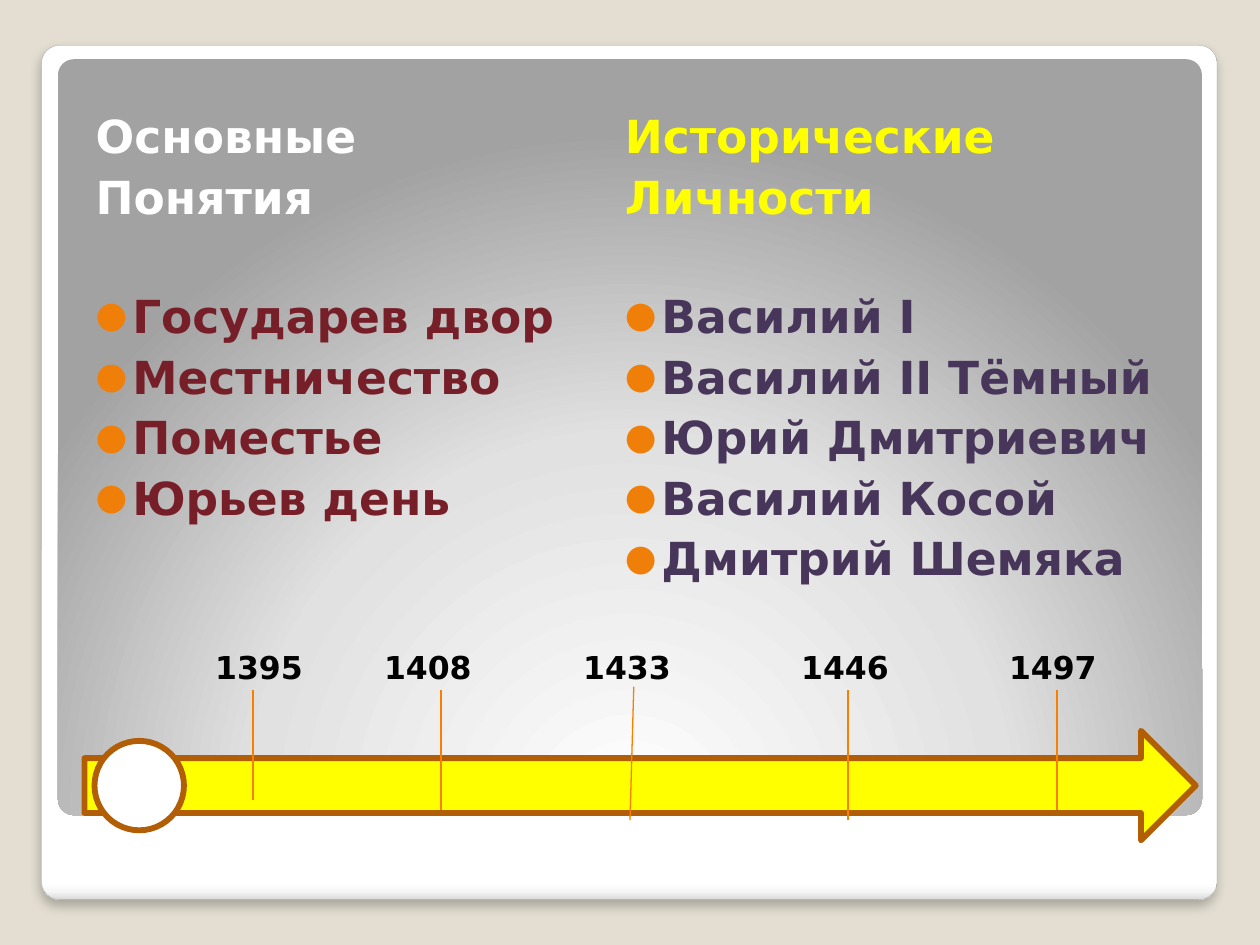
import dataclasses

import lxml.etree
import pptx
import pptx.dml.color
import pptx.enum.shapes
import pptx.oxml.ns
import pptx.util

Inches = pptx.util.Inches
Pt = pptx.util.Pt
qn = pptx.oxml.ns.qn
SHAPE = pptx.enum.shapes.MSO_SHAPE


@dataclasses.dataclass(frozen=True)
class Theme:
    font: str = "DejaVu Sans"
    body_size: float = 26
    year_size: float = 18
    item_gap: float = 3.4
    section_gap: float = 37
    background: str = "E3DED1"
    white: str = "FFFFFF"
    black: str = "000000"
    yellow: str = "FFFF00"
    terms: str = "771F28"
    people: str = "48365A"
    bullet: str = "F07F09"
    tick: str = "F97F00"
    outline: str = "B25E07"
    frame_line: str = "A4A4A4"


THEME = Theme()

COLUMNS = [
    (0.56, 4.3, ["Основные", "Понятия"], THEME.white,
     ["Государев двор", "Местничество", "Поместье", "Юрьев день"], THEME.terms),
    (4.76, 4.74, ["Исторические", "Личности"], THEME.yellow,
     ["Василий I", "Василий II Тёмный", "Юрий Дмитриевич", "Василий Косой",
      "Дмитрий Шемяка"], THEME.people),
]

MILESTONES = [
    ("1395", 1.61, (2.01, 5.48), (2.01, 6.35), 1),
    ("1408", 2.95, (3.5, 5.48), (3.5, 6.43), 0.75),
    ("1433", 4.53, (5.03, 5.45), (5, 6.51), 0.75),
    ("1446", 6.26, (6.73, 5.48), (6.73, 6.51), 0.75),
    ("1497", 7.91, (8.39, 5.48), (8.39, 6.43), 0.75),
]


def rgb(color):
    return pptx.dml.color.RGBColor.from_string(color)


def add_node(parent, tag, **attributes):
    node = lxml.etree.SubElement(parent, qn(tag))
    for name, value in attributes.items():
        node.set(name, str(value))
    return node


def add_shape(s, kind, box, fill=None, line=None, width=0, radius=None):
    sp = s.shapes.add_shape(kind, *map(Inches, box))
    sp.shadow.inherit = False
    if radius is not None:
        sp.adjustments[0] = radius
    if fill:
        sp.fill.solid()
        sp.fill.fore_color.rgb = rgb(fill)
    if line:
        sp.line.color.rgb = rgb(line)
        sp.line.width = Pt(width)
    else:
        sp.line.fill.background()
    return sp


def set_gradient(sp, stops):
    sp.fill.gradient()
    grad = sp.element.spPr.find(qn("a:gradFill"))
    for child in list(grad):
        grad.remove(child)
    stop_list = add_node(grad, "a:gsLst")
    for position, color in stops:
        stop = add_node(stop_list, "a:gs", pos=position * 1000)
        add_node(stop, "a:srgbClr", val=color)
    return grad


def add_shadow(sp):
    effects = sp.element.spPr.find(qn("a:effectLst"))
    shadow = add_node(effects, "a:outerShdw", blurRad=Pt(6), dist=Pt(4),
                      dir=90 * 60000, rotWithShape=0)
    color = add_node(shadow, "a:srgbClr", val=THEME.black)
    add_node(color, "a:alpha", val=25000)


def add_frame(s):
    card = add_shape(s, SHAPE.ROUNDED_RECTANGLE, (0.33, 0.36, 9.33, 6.78),
                     line=THEME.frame_line, width=0.16, radius=0.021)
    grad = set_gradient(card, [(0, THEME.white), (98, THEME.white),
                               (99, "F7F7F7"), (100, "DADADA")])
    add_node(grad, "a:lin", ang=90 * 60000, scaled=0)
    add_shadow(card)

    panel = add_shape(s, SHAPE.ROUNDED_RECTANGLE, (0.46, 0.47, 9.08, 6),
                      radius=0.021)
    grad = set_gradient(panel, [(0, THEME.white), (55, "E1E1E1"), (100, "A2A2A2")])
    circle = add_node(grad, "a:path", path="circle")
    add_node(circle, "a:fillToRect", l=50000, t=175000, r=50000, b=-75000)


def add_run(p, text, size, color):
    r = p.add_run()
    r.text = text
    r.font.name = THEME.font
    r.font.size = Pt(size)
    r.font.bold = True
    r.font.color.rgb = rgb(color)


def add_bullet(p):
    properties = p._p.get_or_add_pPr()
    properties.set("marL", str(Inches(0.29)))
    properties.set("indent", str(Inches(-0.29)))
    add_node(add_node(properties, "a:buClr"), "a:srgbClr", val=THEME.bullet)
    add_node(properties, "a:buSzPct", val=80000)
    add_node(properties, "a:buFont", typeface=THEME.font)
    add_node(properties, "a:buChar", char="●")


def add_text_box(s, box):
    tf = s.shapes.add_textbox(*map(Inches, box)).text_frame
    tf.word_wrap = True
    return tf


def add_column(s, left, width, heading, heading_color, items, item_color):
    tf = add_text_box(s, (left, 0.76, width, 4.6))
    tf.margin_left = Inches(0.2)
    tf.margin_top = Inches(0.1)
    for i, text in enumerate(heading + items):
        p = tf.paragraphs[0] if i == 0 else tf.add_paragraph()
        is_item = i >= len(heading)
        first_item = i == len(heading)
        p.space_before = Pt(THEME.section_gap if first_item else THEME.item_gap)
        if is_item:
            add_bullet(p)
        add_run(p, text, THEME.body_size, item_color if is_item else heading_color)


def add_milestone(s, year, label_left, start, end, width):
    tick = s.shapes.add_connector(pptx.enum.shapes.MSO_CONNECTOR.STRAIGHT,
                                  *map(Inches, start + end))
    tick.line.color.rgb = rgb(THEME.tick)
    tick.line.width = Pt(width)
    add_node(tick.element.spPr, "a:effectLst")
    tf = add_text_box(s, (label_left, 5.09, 1.02, 0.4))
    add_run(tf.paragraphs[0], year, THEME.year_size, THEME.black)


def main():
    prs = pptx.Presentation()
    prs.slide_width = Inches(10)
    prs.slide_height = Inches(7.5)
    s = prs.slides.add_slide(prs.slide_layouts[6])
    s.background.fill.solid()
    s.background.fill.fore_color.rgb = rgb(THEME.background)

    add_frame(s)
    for column in COLUMNS:
        add_column(s, *column)
    add_shape(s, SHAPE.RIGHT_ARROW, (0.67, 5.8, 8.82, 0.87),
              THEME.yellow, THEME.outline, 3.35)
    for milestone in MILESTONES:
        add_milestone(s, *milestone)
    add_shape(s, SHAPE.OVAL, (0.75, 5.88, 0.71, 0.71),
              THEME.white, THEME.outline, 3.35)
    prs.save("out.pptx")


if __name__ == "__main__":
    main()
